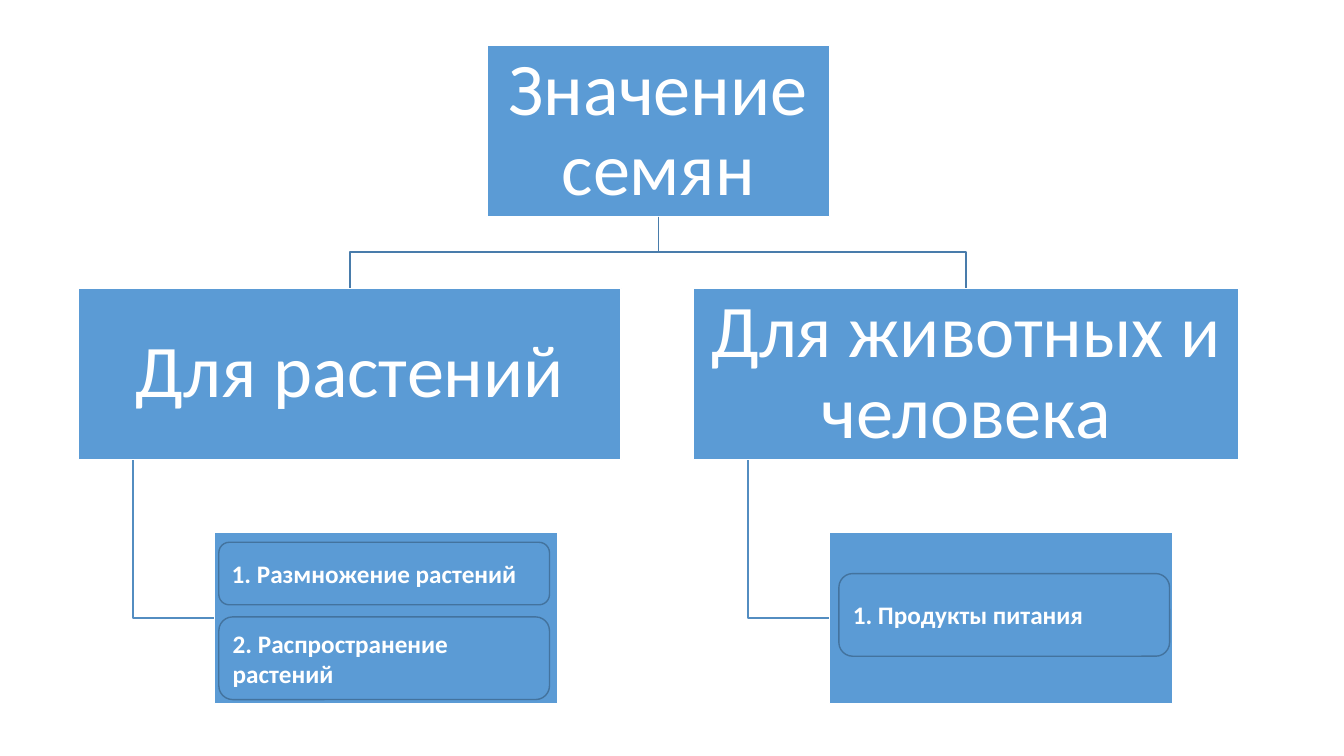
"""Builds a slide with a tree diagram about the importance of seeds."""
from pptx import Presentation
from pptx.dml.color import RGBColor
from pptx.enum.shapes import MSO_SHAPE
from pptx.enum.text import MSO_ANCHOR, MSO_AUTO_SIZE, PP_ALIGN
from pptx.util import Emu, Pt

PX = 9144
COLORS = {"box": "5B9BD5", "white": "FFFFFF", "card": "43739E",
          "branch": "497CAB", "detail": "538DC1"}
BOX_HEIGHT = 170
ROOT = (483, 45, 340, BOX_HEIGHT)
BRANCH_TOP, DETAIL_TOP = 286, 528
DETAIL_INDENT, DROP_INDENT, DETAIL_WIDTH = 135, 54, 340
CARD_WIDTH = 328
BRANCHES = [
    ("Для растений", 78, 538, [
        ("1. Размножение растений", 217, 538, 62),
        ("2. Распространение растений", 217, 612, 82)]),
    ("Для животных и человека", 688, 541, [
        ("1. Продукты питания", 832, 569, 82)]),
]


def color(name):
    return RGBColor.from_string(COLORS[name])


def style_box(shape, line="white"):
    shape.fill.solid()
    shape.fill.fore_color.rgb = color("box")
    shape.line.color.rgb = color(line)
    shape.line.width = Pt(1)


def write_text(shape, text, size=53, bold=False, align=PP_ALIGN.CENTER,
               spacing=0.9, margins=(4, 4)):
    frame = shape.text_frame
    frame.word_wrap = True
    frame.auto_size = MSO_AUTO_SIZE.NONE
    frame.vertical_anchor = MSO_ANCHOR.MIDDLE
    frame.margin_left = frame.margin_right = Emu(margins[0] * PX)
    frame.margin_top = frame.margin_bottom = Emu(margins[1] * PX)
    frame.text = text
    paragraph = frame.paragraphs[0]
    paragraph.alignment = align
    paragraph.line_spacing = spacing
    paragraph.space_before = Pt(0)
    paragraph.font.name = "Calibri"
    paragraph.font.size = Pt(size)
    paragraph.font.bold = bold
    paragraph.font.color.rgb = color("white")


def add_box(slide, bounds, kind=MSO_SHAPE.RECTANGLE, line="white"):
    shape = slide.shapes.add_shape(kind, *(Emu(value * PX) for value in bounds))
    shape.shadow.inherit = False
    style_box(shape, line)
    return shape


def add_root(slide, text):
    title = slide.shapes.title
    title.left, title.top, title.width, title.height = (
        Emu(value * PX) for value in ROOT)
    style_box(title)
    write_text(title, text)


def add_card(slide, text, left, top, height):
    card = add_box(slide, (left, top, CARD_WIDTH, height),
                   MSO_SHAPE.ROUNDED_RECTANGLE, "card")
    write_text(card, text, size=18, bold=True, align=PP_ALIGN.LEFT,
               spacing=1.0, margins=(10, 5))


def add_bent_line(slide, points, line):
    builder = slide.shapes.build_freeform(*points[0], scale=PX)
    builder.add_line_segments(points[1:], close=False)
    shape = builder.convert_to_shape()
    shape.shadow.inherit = False
    shape.fill.background()
    shape.line.color.rgb = color(line)
    shape.line.width = Pt(1)


def add_branch(slide, text, left, width, cards):
    root_center = ROOT[0] + ROOT[2] // 2
    root_bottom = ROOT[1] + BOX_HEIGHT
    middle = (root_bottom + BRANCH_TOP) // 2
    center = left + width // 2
    add_bent_line(slide, [(root_center, root_bottom), (root_center, middle),
                          (center, middle), (center, BRANCH_TOP)], "branch")

    drop = left + DROP_INDENT
    detail_left = left + DETAIL_INDENT
    detail_middle = DETAIL_TOP + BOX_HEIGHT // 2
    add_bent_line(slide, [(drop, BRANCH_TOP + BOX_HEIGHT), (drop, detail_middle),
                          (detail_left, detail_middle)], "detail")

    write_text(add_box(slide, (left, BRANCH_TOP, width, BOX_HEIGHT)), text)
    add_box(slide, (detail_left, DETAIL_TOP, DETAIL_WIDTH, BOX_HEIGHT))
    for card in cards:
        add_card(slide, *card)


def main():
    presentation = Presentation()
    presentation.slide_width = Emu(1333 * PX)
    presentation.slide_height = Emu(750 * PX)
    slide = presentation.slides.add_slide(presentation.slide_layouts[5])
    add_root(slide, "Значение семян")
    for branch in BRANCHES:
        add_branch(slide, *branch)
    presentation.save("out.pptx")


if __name__ == "__main__":
    main()
